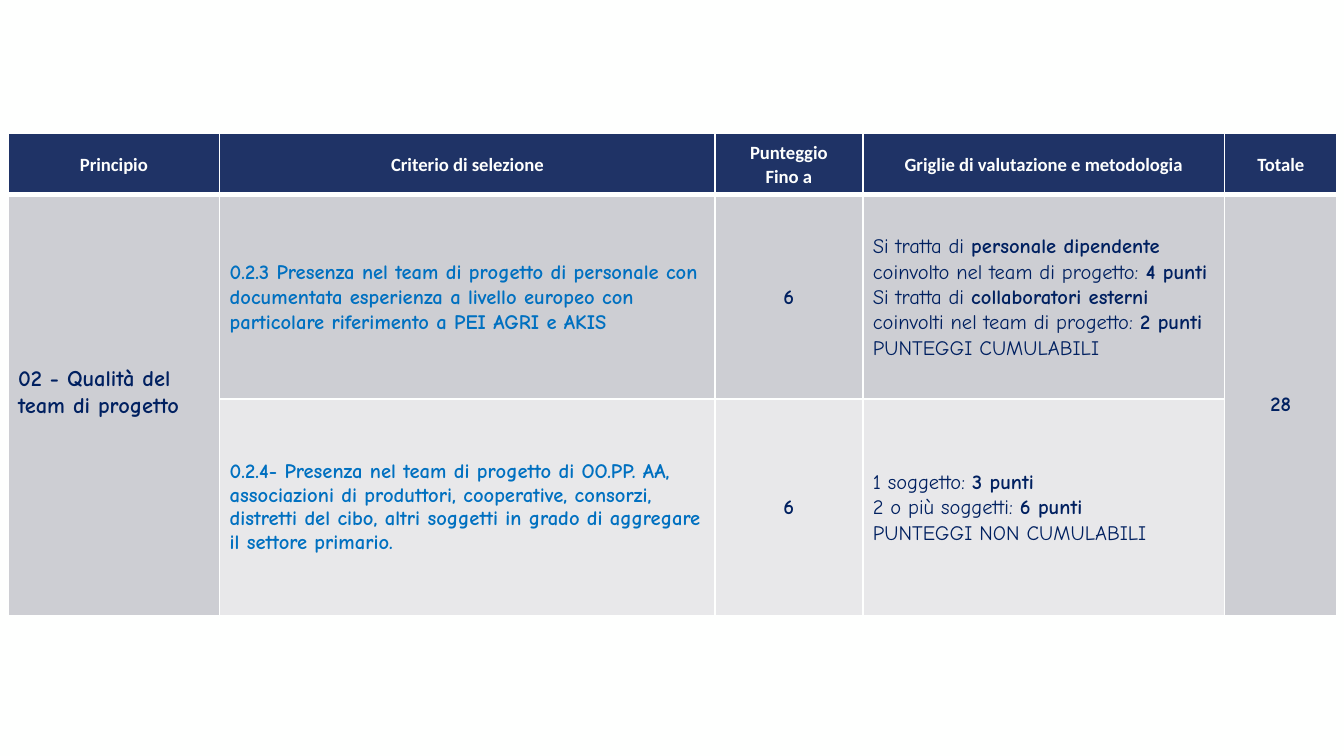
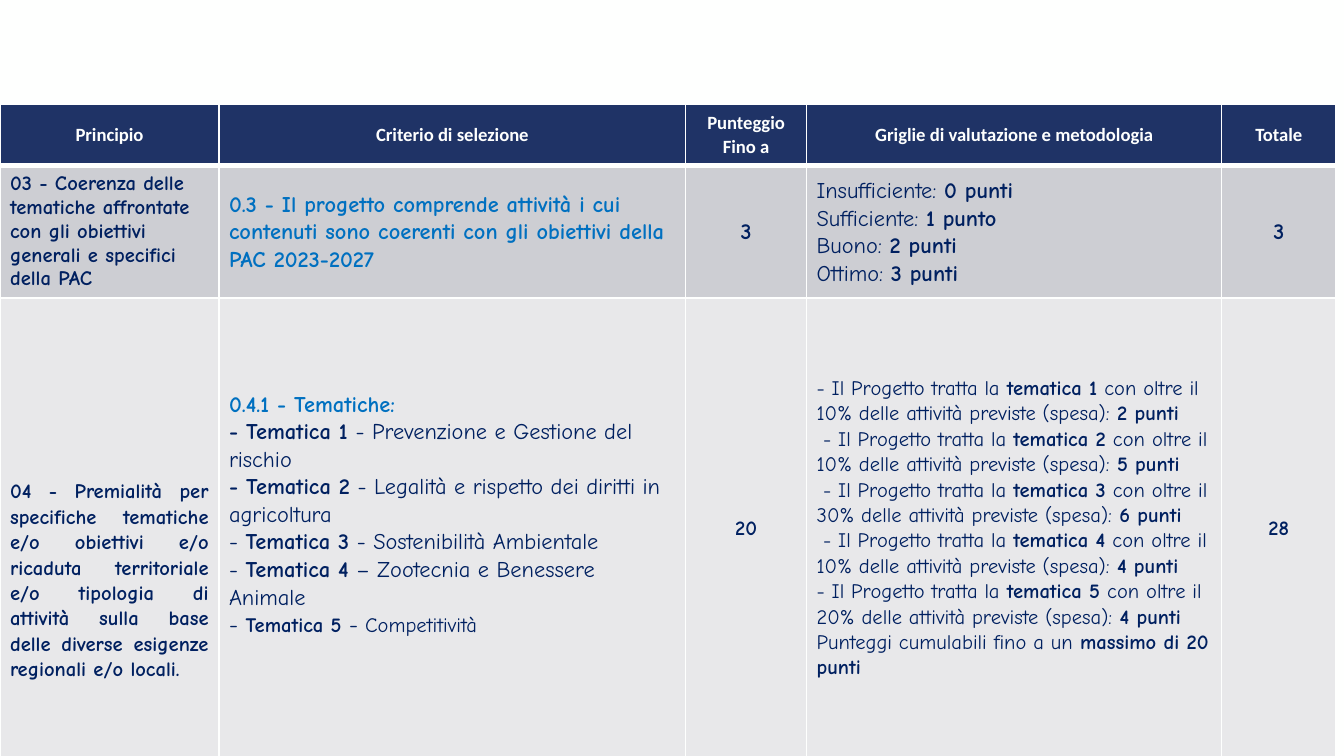
"""Build two slides with tables of selection criteria and their scores."""
from dataclasses import dataclass

from lxml import etree
from pptx import Presentation
from pptx.dml.color import RGBColor
from pptx.enum import text
from pptx.oxml import ns
from pptx.util import Pt

WHITE = RGBColor(0xFE, 0xFF, 0xFE)
NAVY = RGBColor(0x1F, 0x33, 0x66)
INK = RGBColor(0x00, 0x20, 0x60)
BLUE = RGBColor(0x00, 0x70, 0xC0)
GREY = RGBColor(0xCD, 0xCE, 0xD3)
PALE = RGBColor(0xE8, 0xE8, 0xEA)
FILLS = NAVY, GREY, PALE

LEFT = text.PP_ALIGN.LEFT
CENTER = text.PP_ALIGN.CENTER
JUSTIFY = text.PP_ALIGN.JUSTIFY
MIDDLE = text.MSO_ANCHOR.MIDDLE
BOTTOM = text.MSO_ANCHOR.BOTTOM


@dataclass
class Entry:
    """Cell content: *...* marks light text, ~...~ marks text one point smaller."""
    lines: list
    size: float = 11
    lead: RGBColor = INK
    color: RGBColor = INK
    font: str = "Comic Neue"
    align: int = LEFT
    anchor: int = MIDDLE
    spacing: float = 1.07
    bottom: float = 3.6
    side: float = 5.4
    indented: tuple = ()


def heading(*lines):
    """Return a header entry."""
    return Entry(list(lines), 10, WHITE, WHITE, "Calibri", CENTER)


def score(value, size=11, **style):
    """Return a centred number."""
    return Entry([value], size, align=CENTER, **style)


HEADER = [heading("Principio"), heading("Criterio di selezione"),
          heading("Punteggio", "Fino a"),
          heading("Griglie di valutazione e metodologia"), heading("Totale")]


class Deck:
    """Hold the presentation style and the current page."""

    def __init__(self):
        """Start a widescreen presentation."""
        self.deck = Presentation()
        self.deck.slide_width, self.deck.slide_height = Pt(720), Pt(405)
        self.page = None

    def add_page(self):
        """Add a blank page with the shared background."""
        self.page = self.deck.slides.add_slide(self.deck.slide_layouts[6])
        fill = self.page.background.fill
        fill.solid()
        fill.fore_color.rgb = WHITE

    def add_table(self, left, top, height, widths, heights, rows):
        """Add a table under the shared header; an entry of None joins the cell above it."""
        rows = [HEADER] + rows
        frame = self.page.shapes.add_table(
            len(rows), len(widths), Pt(left), Pt(top), Pt(sum(widths)), Pt(height))
        table = frame.table
        table.first_row = table.horz_banding = False
        for column, width in zip(table.columns, widths):
            column.width = Pt(width)
        for row, size in zip(table.rows, heights):
            row.height = Pt(size)
        for r, entries in enumerate(rows):
            for c, entry in enumerate(entries):
                cell = table.cell(r, c)
                self.add_borders(cell, 3 if r == 0 else 0.96)
                cell.fill.solid()
                cell.fill.fore_color.rgb = FILLS[r if entry else r - 1]
                if entry:
                    self.add_entry(cell, entry)
                else:
                    table.cell(r - 1, c).merge(cell)

    def add_borders(self, cell, below):
        """Draw white lines around a cell."""
        props = cell._tc.get_or_add_tcPr()
        for side, width in zip("LRTB", (0.96, 0.96, 0.96, below)):
            line = etree.SubElement(props, ns.qn(f"a:ln{side}"), w=str(Pt(width)))
            fill = etree.SubElement(line, ns.qn("a:solidFill"))
            etree.SubElement(fill, ns.qn("a:srgbClr"), val=str(WHITE))

    def add_entry(self, cell, entry):
        """Put an entry into a cell."""
        cell.vertical_anchor = entry.anchor
        cell.margin_left = cell.margin_right = Pt(entry.side)
        cell.margin_top, cell.margin_bottom = Pt(3.6), Pt(entry.bottom)
        frame = cell.text_frame
        for i, line in enumerate(entry.lines):
            para = frame.add_paragraph() if i else frame.paragraphs[0]
            para.alignment = entry.align
            para.line_spacing = entry.spacing
            if i in entry.indented:
                para._p.get_or_add_pPr().set("indent", str(Pt(3.5)))
            para.font.name, para.font.size = entry.font, Pt(entry.size)
            para.font.bold = True
            para.font.color.rgb = entry.color if i else entry.lead
            self.add_spans(para, line, entry.size)

    def add_spans(self, para, line, size):
        """Split a marked line into runs."""
        for i, part in enumerate(line.split("*")):
            for j, piece in enumerate(part.split("~")):
                if piece:
                    span = para.add_run()
                    span.text = piece
                    if i % 2:
                        span.font.bold = False
                    if j % 2:
                        span.font.size = Pt(size - 1)


def add_team_page(deck):
    """Add the criteria on the quality of the team."""
    deck.add_page()
    deck.add_table(4.3, 71.3, 259.2, [113.4, 265.3, 79.2, 193.7, 60.5], [28.1, 109.4, 115.9], [
        [Entry(["02 - Qualità del team di progetto"], 12, bottom=18),
         Entry(["0.2.3 Presenza nel team di progetto di personale con documentata esperienza "
                "a livello europeo con particolare riferimento a PEI AGRI e AKIS"], lead=BLUE),
         score("6"),
         Entry(["*Si tratta di *personale dipendente* coinvolto nel team di progetto: *4 punti",
                "*Si tratta di *collaboratori esterni* coinvolti nel team di progetto: *2 punti",
                "*PUNTEGGI CUMULABILI*"]),
         score("28", spacing=1.0, side=7.2)],
        [None,
         Entry(["0.2.4- Presenza nel team di progetto di OO.PP. AA, associazioni di produttori, "
                "cooperative, consorzi, distretti del cibo, altri soggetti in grado di "
                "aggregare il settore primario."], lead=BLUE, spacing=1.0),
         score("6"),
         Entry(["*1 soggetto: *3 punti", "*2 o più soggetti: *6 punti",
                "*PUNTEGGI NON CUMULABILI*"]),
         None]])


def add_themes_page(deck):
    """Add the criteria on coherence and themes."""
    shares = [(10, 2), (10, 5), (30, 6), (10, 4), (20, 4)]
    grid = [f"*- Il Progetto tratta la *tematica {n}* con oltre il {share}% delle attività "
            f"previste (spesa): *{points} punti"
            for n, (share, points) in enumerate(shares, 1)]
    deck.add_page()
    deck.add_table(0, 55.6, 380.2, [117.3, 250, 64.8, 222.4, 61.2], [24.5, 58.3, 246.2], [
        [Entry(["03 - Coerenza delle tematiche affrontate con gli obiettivi generali e "
                "specifici della PAC"], spacing=1.0),
         Entry(["0.3 - Il progetto comprende attività i cui contenuti sono coerenti con gli "
                "obiettivi della PAC 2023-2027"], 12, BLUE),
         score("3", 12),
         Entry(["*Insufficiente: *0 punti", "*Sufficiente: *1 punto",
                "*Buono: *2 punti", "*Ottimo: *3 punti"], 12),
         score("3", 12)],
        [Entry(["04 - Premialità per specifiche tematiche e/o obiettivi e/o ricaduta "
                "territoriale e/o tipologia di attività sulla base delle diverse esigenze "
                "regionali e/o locali."], align=JUSTIFY, anchor=BOTTOM, bottom=40.5),
         Entry(["0.4.1 - Tematiche:",
                "- Tematica 1 *- Prevenzione e Gestione del rischio*",
                "- Tematica 2* - Legalità e rispetto dei diritti in agricoltura*",
                "*- *Tematica 3* - Sostenibilità Ambientale*",
                "*- *Tematica 4* – Zootecnia e Benessere Animale*",
                "*- *~Tematica 5 ~*-~ Competitività~*"], 12, BLUE, bottom=18),
         score("20"),
         Entry(grid + ["*Punteggi cumulabili fino a un *massimo di 20 punti"],
               indented=(1, 2, 3)),
         score("28")]])


def main():
    """Build and save the presentation."""
    deck = Deck()
    add_team_page(deck)
    add_themes_page(deck)
    deck.deck.save("out.pptx")


if __name__ == "__main__":
    main()
